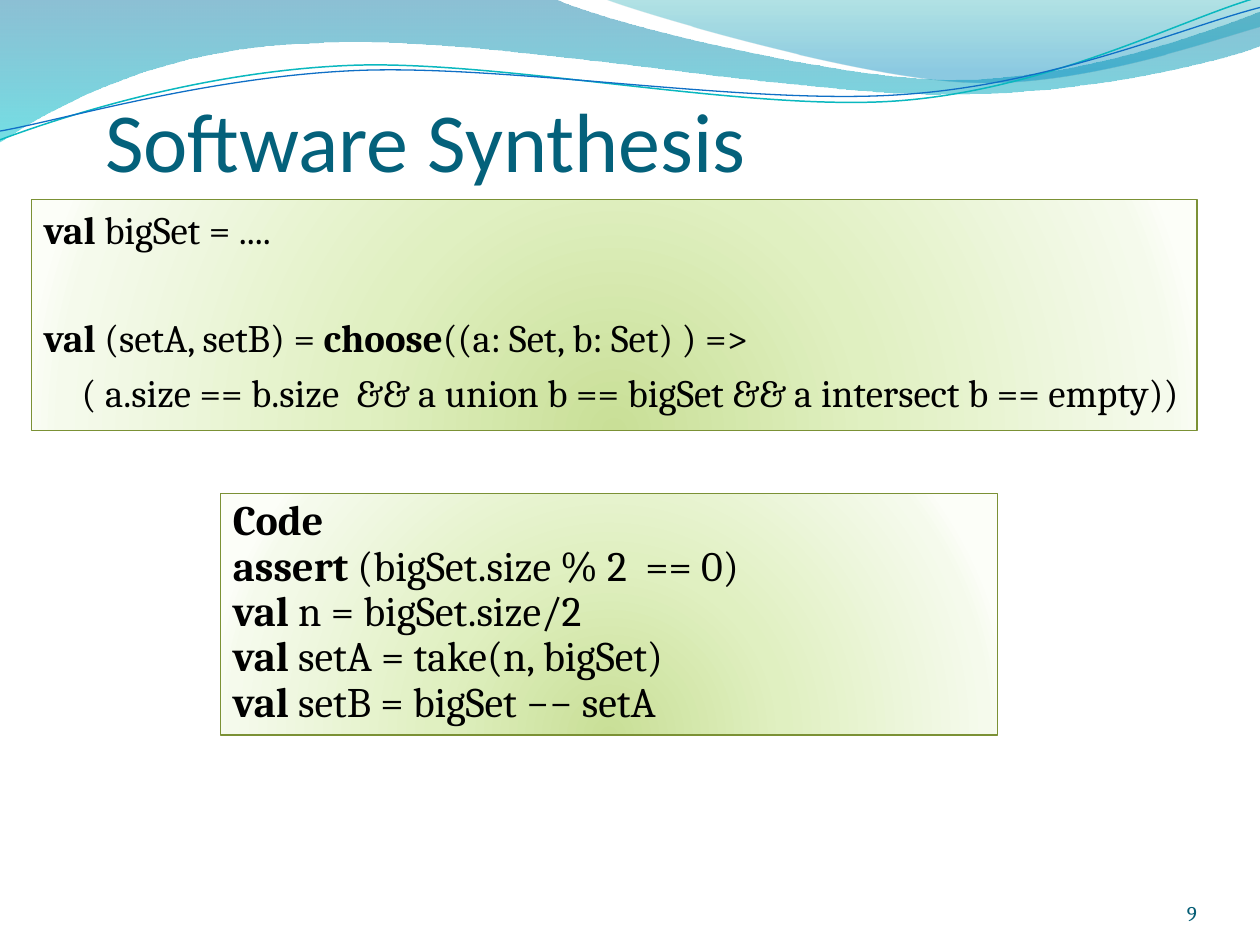
from dataclasses import dataclass
from math import cos, radians, sin

from lxml import etree
from pptx import Presentation
from pptx.dml.color import RGBColor
from pptx.enum.shapes import MSO_SHAPE
from pptx.enum.text import MSO_ANCHOR, MSO_AUTO_SIZE, PP_ALIGN
from pptx.oxml.ns import qn
from pptx.util import Pt

RECTANGLE = MSO_SHAPE.RECTANGLE
TOP, BOTTOM = MSO_ANCHOR.TOP, MSO_ANCHOR.BOTTOM
LEFT, RIGHT = PP_ALIGN.LEFT, PP_ALIGN.RIGHT
NO_FIT = MSO_AUTO_SIZE.NONE
TITLE_ONLY = 5
TILT = 2.7


@dataclass(frozen=True)
class Theme:
    title_font: str = "Calibri"
    body_font: str = "Cambria"
    title_size: float = 48
    spec_size: float = 22.2
    code_size: float = 24
    number_size: float = 12
    title_color: str = "04617B"
    number_color: str = "045D75"
    text_color: str = "000000"
    border_color: str = "7B9135"
    panel_stops: tuple = ((0, "C9DF97", 100), (43, "E0F0C1", 100),
                          (93, "F5FAEC", 100), (100, "FCFEF8", 100))
    wide_wave_stops: tuple = ((0, "0074A1", 45), (100, "00C6CF", 55))
    corner_wave_stops: tuple = ((0, "00A1A9", 30), (80, "008BBF", 45))
    teal_line: str = "0AB8BF"
    blue_line: str = "0F6FC6"


WIDE_WAVE = [
    [(0, 0)], [(316.8, -0.7)],
    [(342.7, 12.2), (478.1, 45.4), (545.8, 45.4)],
    [(614.2, 45.4), (689.8, 18.7), (720, 6.5)],
    [(720.7, 25.9)],
    [(707.8, 31.7), (626.4, 54.7), (537.1, 54)],
    [(447.8, 54), (275, 20.2), (185, 24.5)],
    [(92.9, 25.9), (33.1, 59.8), (-0.7, 81.4)],
]
CORNER_WAVE = [
    [(344.9, -0.7)],
    [(366.5, 7.9), (491, 44.6), (553.7, 46.8)],
    [(616.3, 49.7), (691.9, 23), (720, 15.1)],
    [(720, 0)],
]
TEAL_CURVE = [
    [(0, 79.9)],
    [(34.6, 67), (113.8, 41), (199.4, 37.4)],
    [(284.4, 33.8), (427, 64.1), (513.4, 57.6)],
    [(599.8, 51.1), (675.4, 10.8), (718.6, -1.4)],
]
BLUE_CURVE = [
    [(0, 74.9)],
    [(33.8, 69.1), (118.1, 43.9), (203.8, 40.3)],
    [(290.2, 36.7), (429.8, 60.5), (516.2, 54)],
    [(601.9, 48.2), (677.5, 15.1), (720, 4.3)],
]

SPECIFICATION = [
    ([("val ", True), ("bigSet = ....", False)], {}),
    ([("val", True), (" (setA, setB) = ", False), ("choose", True),
      ("((a: Set, b: Set) ) =>", False)], {"space_before": Pt(35.3)}),
    ([("( a.size == b.size  && a union b == bigSet && a intersect b == empty))",
       False)], {"space_before": Pt(4.4), "indent": 21.6}),
]
CODE = [
    ([(keyword, True), (rest, False)] if rest else [(keyword, True)],
     {"line_spacing": 0.9})
    for keyword, rest in [
        ("Code", ""),
        ("assert ", "(bigSet.size % 2  == 0)"),
        ("val", " n = bigSet.size/2"),
        ("val ", "setA = take(n, bigSet)"),
        ("val ", "setB = bigSet −− setA"),
    ]
]


def assign(target, values):
    for name, value in values.items():
        setattr(target, name, value)


def turn(segments, center, degrees):
    (cx, cy), angle = center, radians(degrees)
    return [[(cx + (x - cx) * cos(angle) - (y - cy) * sin(angle),
              cy + (x - cx) * sin(angle) + (y - cy) * cos(angle))
             for x, y in segment] for segment in segments]


class SlideBuilder:
    def __init__(self, slide, theme):
        self.slide = slide
        self.theme = theme

    def style_font(self, font, face, size, color, bold=False):
        assign(font, {"name": face, "size": Pt(size), "bold": bold})
        font.color.rgb = RGBColor.from_string(color)

    def style_frame(self, frame, anchor, margins):
        assign(frame, {"word_wrap": True, "auto_size": NO_FIT, "vertical_anchor": anchor})
        sides = ("margin_left", "margin_top", "margin_right", "margin_bottom")
        assign(frame, dict(zip(sides, map(Pt, margins))))

    def gradient(self, shape, stops, radial=False):
        shape.fill.background()
        properties = shape._element.spPr
        gradient = etree.Element(qn("a:gradFill"), rotWithShape="1")
        stop_list = etree.SubElement(gradient, qn("a:gsLst"))
        for position, color, opacity in stops:
            stop = etree.SubElement(stop_list, qn("a:gs"), pos=str(position * 1000))
            paint = etree.SubElement(stop, qn("a:srgbClr"), val=color)
            if opacity < 100:
                etree.SubElement(paint, qn("a:alpha"), val=str(opacity * 1000))
        if radial:
            focus = etree.SubElement(gradient, qn("a:path"))
            focus.set("path", "circle")
            etree.SubElement(focus, qn("a:fillToRect"), l="50000", t="130000",
                             r="50000", b="-30000")
        else:
            etree.SubElement(gradient, qn("a:lin"), ang="5400000", scaled="0")
        properties.replace(properties.find(qn("a:noFill")), gradient)

    def outline(self, shape, color, width):
        shape.line.color.rgb = RGBColor.from_string(color)
        shape.line.width = Pt(width)

    def freeform(self, segments, close):
        start, *points = [(Pt(x), Pt(y)) for segment in segments for x, y in segment]
        builder = self.slide.shapes.build_freeform(*start)
        builder.add_line_segments(points, close=close)
        shape = builder.convert_to_shape()
        shape.shadow.inherit = False
        steps = iter(list(shape._element.iter(qn("a:lnTo"))))
        for segment in segments[1:]:
            members = [next(steps) for _ in segment]
            if len(members) == 3:
                bezier = etree.Element(qn("a:cubicBezTo"))
                members[0].addprevious(bezier)
                for member in members:
                    bezier.append(member[0])
                    member.getparent().remove(member)
        return shape

    def wave(self, segments, stops):
        shape = self.freeform(segments, True)
        self.gradient(shape, stops)
        shape.line.fill.background()

    def curve(self, segments, center, color, width):
        shape = self.freeform(turn(segments, center, TILT), False)
        shape.rotation = -TILT
        shape.fill.background()
        self.outline(shape, color, width)

    def title(self, text, box):
        heading = self.slide.shapes.title
        assign(heading, dict(zip(("left", "top", "width", "height"), map(Pt, box))))
        self.style_frame(heading.text_frame, BOTTOM, (0, 3.6, 0, 0))
        paragraph = heading.text_frame.paragraphs[0]
        paragraph.text = text
        paragraph.alignment = LEFT
        self.style_font(paragraph.font, self.theme.title_font,
                        self.theme.title_size, self.theme.title_color)

    def panel(self, lines, box, size):
        shape = self.slide.shapes.add_shape(RECTANGLE, *map(Pt, box))
        shape.shadow.inherit = False
        self.gradient(shape, self.theme.panel_stops, radial=True)
        self.outline(shape, self.theme.border_color, 0.75)
        frame = shape.text_frame
        self.style_frame(frame, TOP, (7.2, 3.6, 7.2, 3.6))
        for index, (runs, spacing) in enumerate(lines):
            paragraph = frame.add_paragraph() if index else frame.paragraphs[0]
            layout = dict(spacing)
            indent = layout.pop("indent", 0)
            if indent:
                paragraph._p.get_or_add_pPr().set("marL", str(Pt(indent)))
            assign(paragraph, {"alignment": LEFT, **layout})
            for text, bold in runs:
                run = paragraph.add_run()
                run.text = text
                self.style_font(run.font, self.theme.body_font, size,
                                self.theme.text_color, bold)

    def page_number(self, text, box):
        frame = self.slide.shapes.add_textbox(*map(Pt, box)).text_frame
        self.style_frame(frame, BOTTOM, (0, 0, 0, 0))
        paragraph = frame.paragraphs[0]
        paragraph.text = text
        paragraph.alignment = RIGHT
        self.style_font(paragraph.font, self.theme.body_font,
                        self.theme.number_size, self.theme.number_color)


def main():
    deck = Presentation()
    assign(deck, {"slide_width": Pt(720), "slide_height": Pt(540)})
    theme = Theme()
    page = SlideBuilder(deck.slides.add_slide(deck.slide_layouts[TITLE_ONLY]), theme)
    page.wave(WIDE_WAVE, theme.wide_wave_stops)
    page.wave(CORNER_WAVE, theme.corner_wave_stops)
    page.curve(TEAL_CURVE, (359.3, 41.4), theme.teal_line, 0.85)
    page.curve(BLUE_CURVE, (359.6, 42.5), theme.blue_line, 0.75)
    page.title("Software Synthesis", (60, 18, 600, 90))
    page.panel(SPECIFICATION, (18, 114, 666, 132), theme.spec_size)
    page.panel(CODE, (126, 282, 444, 138), theme.code_size)
    page.page_number("9", (624, 500.4, 60, 28.8))
    deck.save("out.pptx")


if __name__ == "__main__":
    main()
